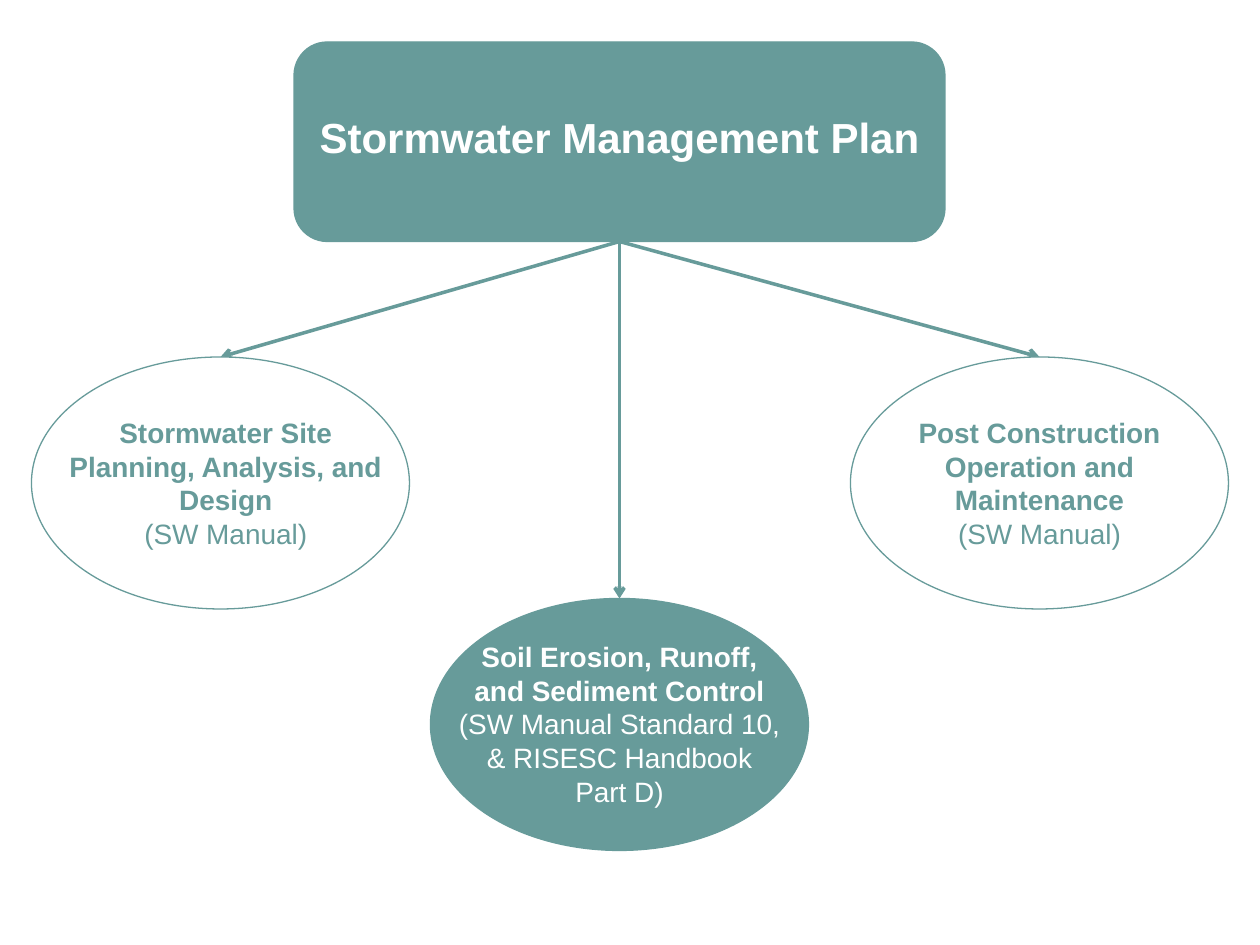
from dataclasses import dataclass

from lxml import etree
from pptx import Presentation
from pptx import util as u
from pptx.dml.color import RGBColor
from pptx.enum import shapes, text
from pptx.oxml import ns


@dataclass(frozen=True)
class Theme:
    teal: RGBColor = RGBColor(0x67, 0x9B, 0x9A)
    white: RGBColor = RGBColor(0xFF, 0xFF, 0xFF)
    font: str = "Arial"
    title_size: int = 24
    topic_size: int = 16
    outline: float = 0.75
    arrow: float = 2


THEME = Theme()

# Left, top, width and height in points
PLAN = (168, 24, 372, 114)
PLAN_LABEL = (168, 60, 372, 36)
TOPIC_WIDTH, TOPIC_HEIGHT = 216, 144

# Topic left and top, fill, text colour, label box, heading, source
TOPICS = [
    ((18, 204), THEME.white, THEME.teal, (24, 234, 210, 85),
     "Stormwater Site Planning, Analysis, and Design", "(SW Manual)"),
    ((486, 204), THEME.white, THEME.teal, (492, 234, 204, 85),
     "Post Construction Operation and Maintenance", "(SW Manual)"),
    ((246, 342), THEME.teal, THEME.white, (255, 362, 198, 104.5),
     "Soil Erosion, Runoff, and Sediment Control",
     "(SW Manual Standard 10, & RISESC Handbook Part D)"),
]


def points(values):
    return [u.Pt(value) for value in values]


def add_node(slide, preset, box, fill):
    node = slide.shapes.add_shape(preset, *points(box))
    node.shadow.inherit = False
    node.fill.solid()
    node.fill.fore_color.rgb = fill
    node.line.color.rgb = THEME.teal
    node.line.width = u.Pt(THEME.outline)


def add_label(slide, box, lines, size, color):
    """Add centred text whose first line is bold."""
    frame = slide.shapes.add_textbox(*points(box)).text_frame
    frame.word_wrap = True
    frame.text = "\n".join(lines)
    for index, paragraph in enumerate(frame.paragraphs):
        paragraph.alignment = text.PP_ALIGN.CENTER
        for run in paragraph.runs:
            run.font.name = THEME.font
            run.font.size = u.Pt(size)
            run.font.bold = index == 0
            run.font.color.rgb = color


def add_arrow(slide, start, end):
    arrow = slide.shapes.add_connector(
        shapes.MSO_CONNECTOR.STRAIGHT, *points(start + end))
    arrow.line.color.rgb = THEME.teal
    arrow.line.width = u.Pt(THEME.arrow)
    etree.SubElement(arrow.line._get_or_add_ln(), ns.qn("a:tailEnd"), type="arrow")
    etree.SubElement(arrow._element.spPr, ns.qn("a:effectLst"))


def main():
    deck = Presentation()
    deck.slide_width, deck.slide_height = points((720, 540))
    slide = deck.slides.add_slide(deck.slide_layouts[6])

    left, top, width, height = PLAN
    plan_bottom = (left + width / 2, top + height)
    for (topic_left, topic_top), *_ in TOPICS:
        add_arrow(slide, plan_bottom, (topic_left + TOPIC_WIDTH / 2, topic_top))

    add_node(slide, shapes.MSO_SHAPE.ROUNDED_RECTANGLE, PLAN, THEME.teal)
    add_label(slide, PLAN_LABEL, ["Stormwater Management Plan"],
              THEME.title_size, THEME.white)

    for corner, fill, color, label_box, heading, source in TOPICS:
        add_node(slide, shapes.MSO_SHAPE.OVAL,
                 corner + (TOPIC_WIDTH, TOPIC_HEIGHT), fill)
        add_label(slide, label_box, [heading, source], THEME.topic_size, color)

    deck.save("out.pptx")


if __name__ == "__main__":
    main()
